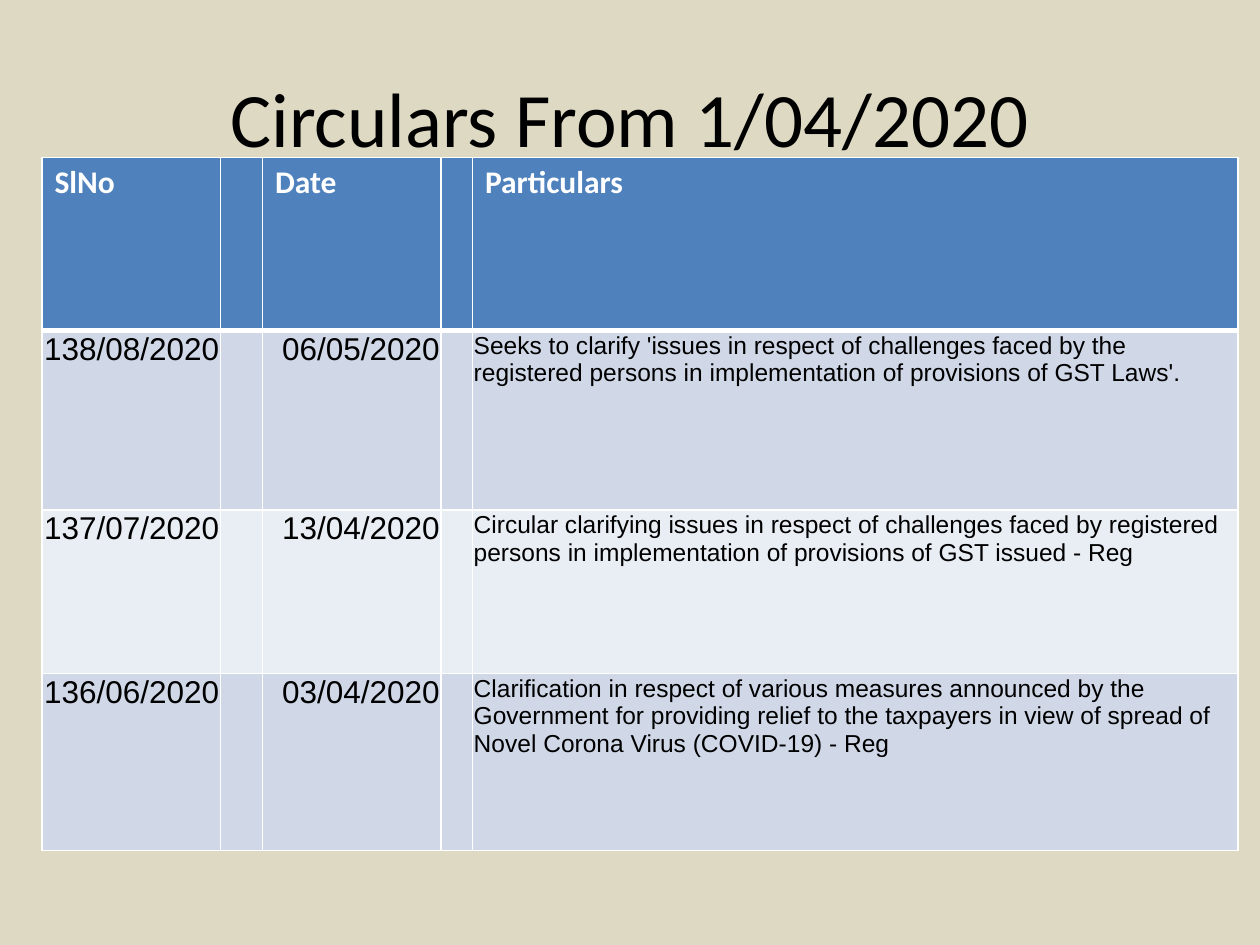
"""Build a slide that lists circulars in a table."""
from lxml.etree import SubElement
from pptx import Presentation
from pptx.dml.color import RGBColor as Color
from pptx.enum.text import MSO_ANCHOR as Anchor, PP_ALIGN as Align
from pptx.oxml.ns import qn
from pptx.util import Pt

COLORS = {
    "page": "DDD9C3",
    "header": "4F81BD",
    "odd": "D0D8E8",
    "even": "E9EDF4",
    "border": "FFFFFF",
    "light": "FFFFFF",
    "dark": "000000",
}
COLUMN_WIDTHS = [102, 24, 102, 18, 437.5]
ROW_HEIGHTS = [99, 102.5, 93.5, 101]
TABLE_ROWS = [
    ["SlNo", "", "Date", "", "Particulars"],
    ["138/08/2020", "", "06/05/2020", "",
     "Seeks to clarify 'issues in respect of challenges faced by the registered "
     "persons in implementation of provisions of GST Laws'."],
    ["137/07/2020", "", "13/04/2020", "",
     "Circular clarifying issues in respect of challenges faced by registered "
     "persons in implementation of provisions of GST issued - Reg"],
    ["136/06/2020", "", "03/04/2020", "",
     "Clarification in respect of various measures announced by the Government "
     "for providing relief to the taxpayers in view of spread of Novel Corona "
     "Virus (COVID-19) - Reg"],
]
TITLE_FONT = {"name": "Calibri", "size": Pt(44), "bold": False}
HEADER_FONT = {"name": "Calibri", "size": Pt(18), "bold": True}
NUMBER_FONT = {"name": "Arial", "size": Pt(18), "bold": False}
DETAIL_FONT = {"name": "Arial", "size": Pt(14), "bold": False}
TITLE_PLACE = {"left": Pt(36), "top": Pt(21.6), "width": Pt(648), "height": Pt(90)}
BODY_MARGINS = {
    "margin_left": Pt(0.75),
    "margin_right": Pt(0.75),
    "margin_top": Pt(0.75),
    "margin_bottom": 0,
}


def apply_format(target, values):
    for name, value in values.items():
        setattr(target, name, value)


def paint(fill, color):
    fill.solid()
    fill.fore_color.rgb = Color.from_string(COLORS[color])


def write_text(frame, text, font, color, align):
    para = frame.paragraphs[0]
    para.alignment = align
    span = para.add_run()
    span.text = text
    apply_format(span.font, font)
    span.font.color.rgb = Color.from_string(COLORS[color])


def add_title(page, text):
    title = page.shapes.title
    apply_format(title, TITLE_PLACE)
    title.text_frame.vertical_anchor = Anchor.MIDDLE
    write_text(title.text_frame, text, TITLE_FONT, "dark", Align.CENTER)


def add_borders(cell, widths):
    properties = cell._tc.get_or_add_tcPr()
    for side, width in widths.items():
        line = SubElement(properties, qn(f"a:ln{side}"), w=str(Pt(width)))
        fill = SubElement(line, qn("a:solidFill"))
        SubElement(fill, qn("a:srgbClr"), val=COLORS["border"])


def format_cell(cell, text, row, column):
    top = 3 if row == 1 else 1
    bottom = 3 if row == 0 else 1
    add_borders(cell, {"L": 1, "R": 1, "T": top, "B": bottom})
    if row == 0:
        paint(cell.fill, "header")
        font, color, align = HEADER_FONT, "light", Align.LEFT
    else:
        paint(cell.fill, "odd" if row % 2 else "even")
        is_detail = column == len(COLUMN_WIDTHS) - 1
        font = DETAIL_FONT if is_detail else NUMBER_FONT
        color, align = "dark", Align.LEFT if is_detail else Align.RIGHT
        if text:
            apply_format(cell, BODY_MARGINS)
    if text:
        write_text(cell.text_frame, text, font, color, align)


def add_circulars(page):
    table = page.shapes.add_table(
        len(ROW_HEIGHTS), len(COLUMN_WIDTHS), Pt(24), Pt(90),
        Pt(sum(COLUMN_WIDTHS)), Pt(sum(ROW_HEIGHTS)),
    ).table
    for column, width in zip(table.columns, COLUMN_WIDTHS):
        column.width = Pt(width)
    for row, height in zip(table.rows, ROW_HEIGHTS):
        row.height = Pt(height)
    for row, texts in enumerate(TABLE_ROWS):
        for column, text in enumerate(texts):
            format_cell(table.cell(row, column), text, row, column)


def main():
    deck = Presentation()
    apply_format(deck, {"slide_width": Pt(720), "slide_height": Pt(540)})
    page = deck.slides.add_slide(deck.slide_layouts.get_by_name("Title Only"))
    paint(page.background.fill, "page")
    add_title(page, "Circulars From 1/04/2020")
    add_circulars(page)
    deck.save("out.pptx")


if __name__ == "__main__":
    main()
